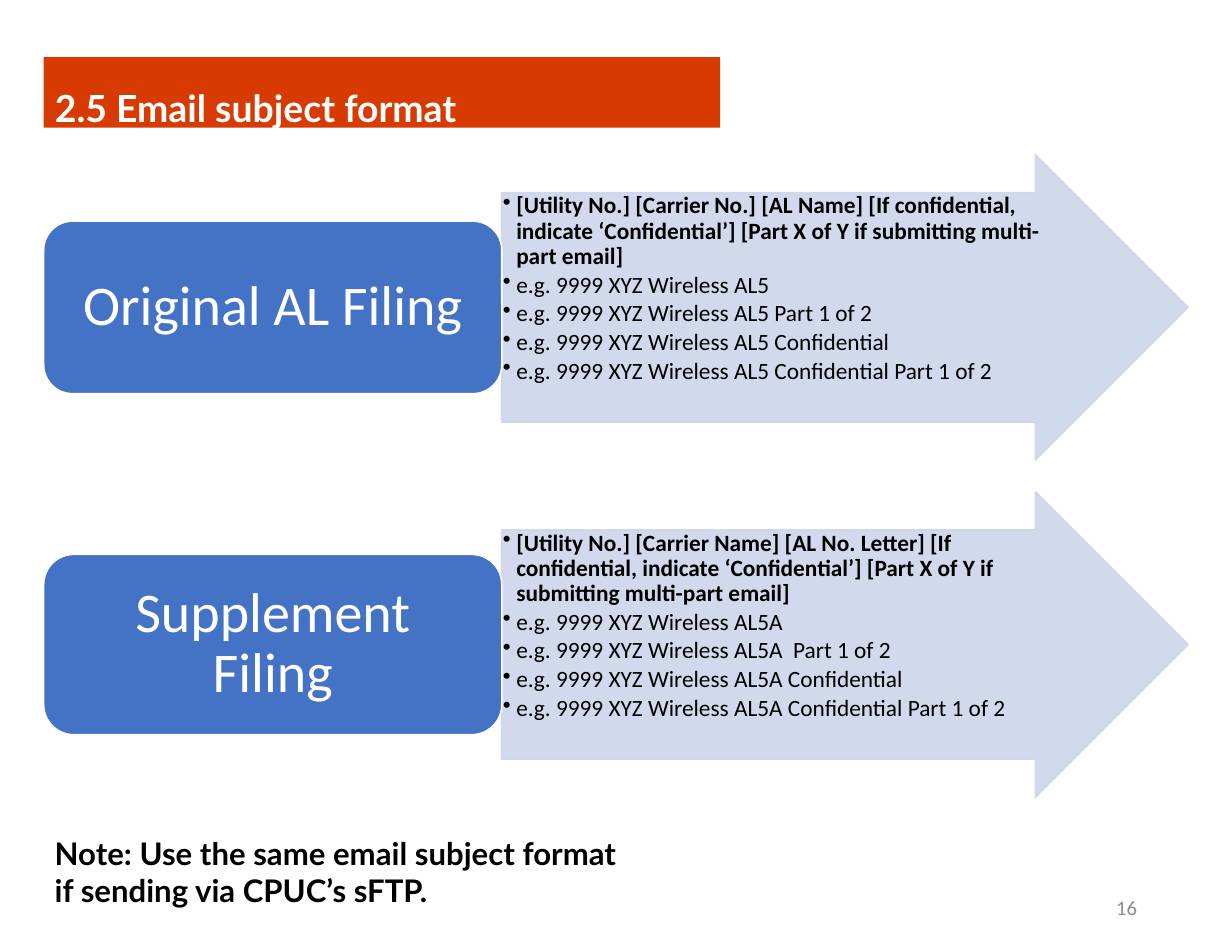
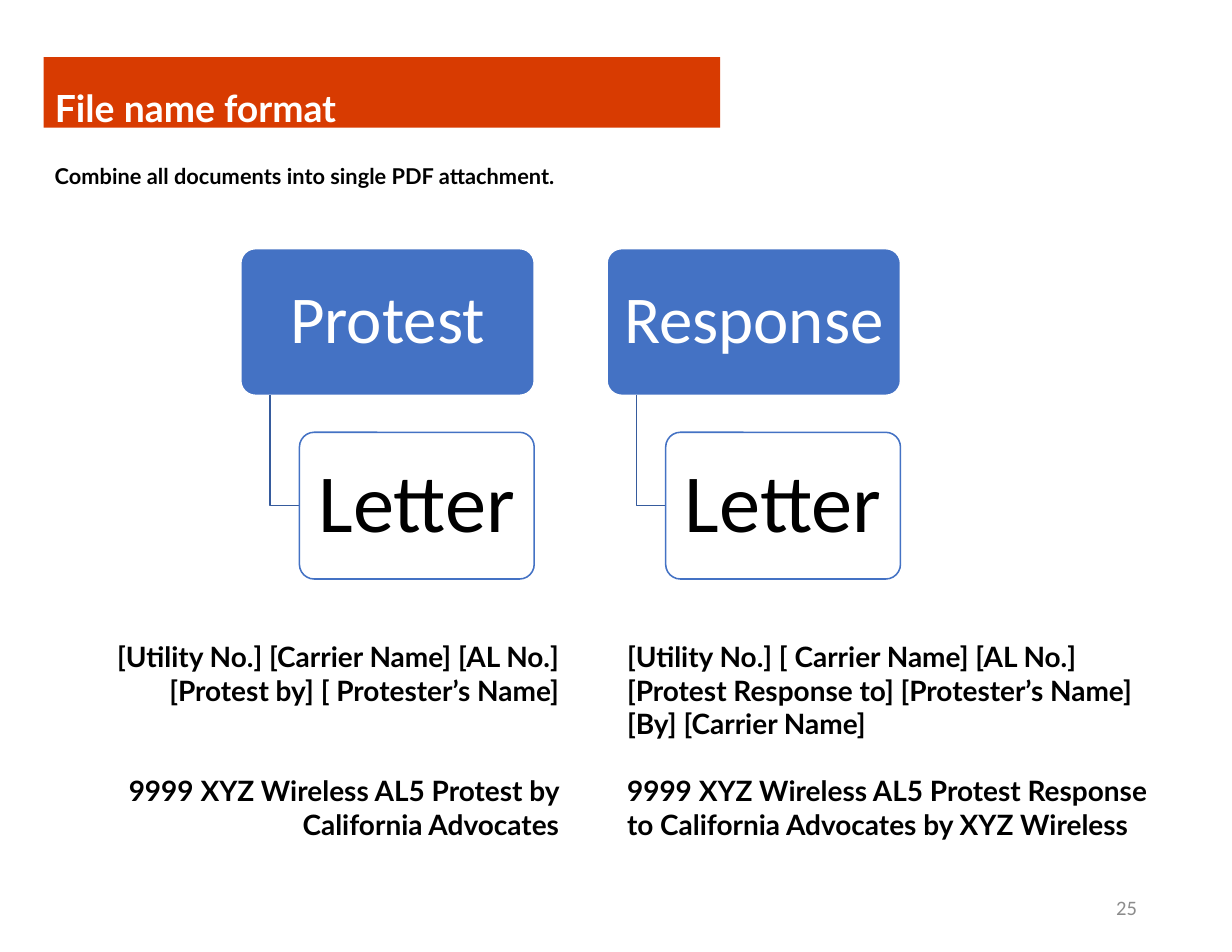
"""Builds two slides on the email subject and file name formats of filings."""

from dataclasses import dataclass
from typing import NamedTuple

import lxml.etree
import pptx
import pptx.dml.color
import pptx.enum.shapes
import pptx.enum.text
import pptx.oxml.ns
import pptx.util

SHAPE = pptx.enum.shapes.MSO_SHAPE
ALIGN = pptx.enum.text.PP_ALIGN
ANCHOR = pptx.enum.text.MSO_ANCHOR
SLIDE_WIDTH = pptx.util.Inches(11)
SLIDE_HEIGHT = pptx.util.Inches(8.5)
COLUMN = SLIDE_WIDTH / 110
ROW = SLIDE_HEIGHT / 85


@dataclass(frozen=True)
class Theme:
    band: str = "D83B01"
    block: str = "4472C4"
    arrow: str = "CFD5EA"
    elbow: str = "365B9D"
    white: str = "FFFFFF"
    black: str = "000000"
    muted: str = "8C8C8C"
    heading_font: str = "Lato"
    body_font: str = "Calibri"
    title_size: float = 24
    note_size: float = 20
    pattern_size: float = 18
    lead_size: float = 14
    label_size: float = 36
    bullet_size: float = 15
    parent_size: float = 43
    child_size: float = 53
    number_size: float = 13.2


THEME = Theme()


class Box(NamedTuple):
    left: float
    top: float
    width: float
    height: float

    def lengths(self) -> tuple[int, int, int, int]:
        return (round(self.left * COLUMN), round(self.top * ROW),
                round(self.width * COLUMN), round(self.height * ROW))


class Filing(NamedTuple):
    label: str
    label_rows: float
    subject: str
    letter: str


class FileName(NamedTuple):
    parent: str
    pattern: str
    example: str
    pattern_left: float
    align: ALIGN
    blank_lines: int


TITLE_BOX = Box(3.9, 5.1, 60.4, 6.3)
NUMBER_BOX = Box(77.7, 78.8, 24.8, 4.5)
NOTE_BOX = Box(3.9, 74, 52.5, 7.7)
LEAD_BOX = Box(3.9, 14, 63, 3.4)
FIRST_ARROW = Box(44.8, 13.8, 61.3, 27.3)
ARROW_PITCH = 30.1
LABEL_LEFT = 3.9
FIRST_PARENT = Box(21.5, 22.2, 26.2, 13.1)
PARENT_PITCH = 32.7
CHILD_DROP = 16.4

FILINGS = [
    Filing("Original AL Filing", 15.4,
           "[Utility No.] [Carrier No.] [AL Name] [If confidential, indicate "
           "‘Confidential’] [Part X of Y if submitting multi-part email]",
           "AL5"),
    Filing("Supplement Filing", 16.1,
           "[Utility No.] [Carrier Name] [AL No. Letter] [If confidential, indicate "
           "‘Confidential’] [Part X of Y if submitting multi-part email]",
           "AL5A"),
]
EXAMPLE_ENDINGS = ["", " Part 1 of 2", " Confidential", " Confidential Part 1 of 2"]
FILE_NAMES = [
    FileName("Protest",
             "[Utility No.] [Carrier Name] [AL No.] [Protest by] [ Protester’s Name]",
             "9999 XYZ Wireless AL5 Protest by California Advocates",
             0, ALIGN.RIGHT, 2),
    FileName("Response",
             "[Utility No.] [ Carrier Name] [AL No.] [Protest Response to] "
             "[Protester’s Name] [By] [Carrier Name]",
             "9999 XYZ Wireless AL5 Protest Response to California Advocates "
             "by XYZ Wireless",
             55, ALIGN.LEFT, 1),
]


def rgb(color: str) -> pptx.dml.color.RGBColor:
    """Turn a hex string into a colour."""
    return pptx.dml.color.RGBColor.from_string(color)


def write(shape, texts: list[str], *, size: float, color: str = THEME.black,
          font: str = THEME.body_font, bold_count: int = 0,
          align: ALIGN = ALIGN.LEFT, anchor: ANCHOR = ANCHOR.TOP,
          spacing: float = 1, gap: float = 0, bullets: bool = False,
          insets: tuple[float, float] = (0.1, 0.05)) -> None:
    """Write one paragraph per text into a shape."""
    frame = shape.text_frame
    frame.word_wrap = True
    frame.auto_size = pptx.enum.text.MSO_AUTO_SIZE.NONE
    frame.vertical_anchor = anchor
    frame.margin_left = frame.margin_right = pptx.util.Inches(insets[0])
    frame.margin_top = frame.margin_bottom = pptx.util.Inches(insets[1])
    for index, text in enumerate(texts):
        paragraph = frame.add_paragraph() if index else frame.paragraphs[0]
        paragraph.alignment = align
        paragraph.line_spacing = spacing
        paragraph.space_before = pptx.util.Pt(gap if index else 0)
        run = paragraph.add_run()
        run.text = text
        run.font.name = font
        run.font.size = pptx.util.Pt(size)
        run.font.bold = index < bold_count
        run.font.color.rgb = rgb(color)
        if bullets:
            add_bullet(paragraph)


def add_bullet(paragraph) -> None:
    """Give a paragraph a hanging round bullet."""
    properties = paragraph._p.get_or_add_pPr()
    indent = pptx.util.Inches(0.12)
    properties.set("marL", str(indent))
    properties.set("indent", str(-indent))
    bullet = lxml.etree.SubElement(properties, pptx.oxml.ns.qn("a:buChar"))
    bullet.set("char", "•")


def add_text(slide, box: Box, texts: list[str], **text_format) -> None:
    """Add a text box with formatted text."""
    write(slide.shapes.add_textbox(*box.lengths()), texts, **text_format)


def add_block(slide, kind: SHAPE, box: Box, fill: str, line: str,
              adjustments: tuple[float, ...] = ()):
    """Add a filled and outlined preset shape."""
    shape = slide.shapes.add_shape(kind, *box.lengths())
    shape.shadow.inherit = False
    shape.fill.solid()
    shape.fill.fore_color.rgb = rgb(fill)
    shape.line.color.rgb = rgb(line)
    shape.line.width = pptx.util.Pt(1)
    for index, value in enumerate(adjustments):
        shape.adjustments[index] = value
    return shape


def soften(shape, percent: int) -> None:
    """Set the opacity of a shape's fill and line."""
    for color in shape._element.spPr.iter(pptx.oxml.ns.qn("a:srgbClr")):
        alpha = lxml.etree.SubElement(color, pptx.oxml.ns.qn("a:alpha"))
        alpha.set("val", str(percent * 1000))


def add_titled_slide(presentation, title: str, number: int):
    """Add a slide with its title band and page number."""
    slide = presentation.slides.add_slide(presentation.slide_layouts[5])
    band = slide.shapes.title
    band.left, band.top, band.width, band.height = TITLE_BOX.lengths()
    band.fill.solid()
    band.fill.fore_color.rgb = rgb(THEME.band)
    write(band, [title], size=THEME.title_size, color=THEME.white,
          font=THEME.heading_font, bold_count=1, spacing=1.5)
    add_text(slide, NUMBER_BOX, [str(number)], size=THEME.number_size,
             color=THEME.muted, align=ALIGN.RIGHT, anchor=ANCHOR.MIDDLE)
    return slide


def add_filing(slide, filing: Filing, arrow_box: Box) -> None:
    """Add a filing label and the arrow with its subject lines."""
    arrow = add_block(slide, SHAPE.RIGHT_ARROW, arrow_box, THEME.arrow,
                      THEME.arrow, (0.75, 0.5))
    soften(arrow, 90)
    examples = [f"e.g. 9999 XYZ Wireless {filing.letter}{ending}"
                for ending in EXAMPLE_ENDINGS]
    if filing.letter == "AL5A":
        examples[1] = examples[1].replace(" Part", "  Part")
    write(arrow, [filing.subject, *examples], size=THEME.bullet_size,
          bold_count=1, spacing=0.9, gap=2.25, bullets=True, insets=(0.01, 0.01))
    label_top = arrow_box.top + (arrow_box.height - filing.label_rows) / 2
    label_box = Box(LABEL_LEFT, label_top, arrow_box.left - LABEL_LEFT,
                    filing.label_rows)
    label = add_block(slide, SHAPE.ROUNDED_RECTANGLE, label_box, THEME.block,
                      THEME.white)
    write(label, [filing.label], size=THEME.label_size, color=THEME.white,
          align=ALIGN.CENTER, anchor=ANCHOR.MIDDLE, spacing=0.9,
          insets=(0.15, 0.07))


def add_elbow(slide, parent: Box, child: Box) -> None:
    """Draw the bent line from a parent block to its child."""
    left = round((parent.left + parent.width * 0.1) * COLUMN)
    top = round((parent.top + parent.height) * ROW)
    right = round(child.left * COLUMN)
    bottom = round((child.top + child.height / 2) * ROW)
    builder = slide.shapes.build_freeform(left, top)
    builder.add_line_segments([(left, bottom), (right, bottom)], close=False)
    elbow = builder.convert_to_shape()
    elbow.shadow.inherit = False
    elbow.fill.background()
    elbow.line.color.rgb = rgb(THEME.elbow)
    elbow.line.width = pptx.util.Pt(1)


def add_file_name(slide, file_name: FileName, parent: Box) -> None:
    """Add a document tree and its file name pattern."""
    child = Box(parent.left + parent.width * 0.2, parent.top + CHILD_DROP,
                parent.width * 0.8, parent.height)
    centred = dict(align=ALIGN.CENTER, anchor=ANCHOR.MIDDLE, spacing=0.9)
    block = add_block(slide, SHAPE.ROUNDED_RECTANGLE, parent, THEME.block,
                      THEME.white, (0.1,))
    write(block, [file_name.parent], size=THEME.parent_size, color=THEME.white,
          insets=(0.09, 0.06), **centred)
    add_elbow(slide, parent, child)
    block = add_block(slide, SHAPE.ROUNDED_RECTANGLE, child, THEME.white,
                      THEME.block, (0.1,))
    write(block, ["Letter"], size=THEME.child_size, insets=(0.11, 0.07), **centred)
    add_text(slide, Box(file_name.pattern_left, 56.6, 50.9, 19.2),
             [file_name.pattern, file_name.example], size=THEME.pattern_size,
             font=THEME.heading_font, bold_count=2, align=file_name.align,
             gap=file_name.blank_lines * THEME.pattern_size * 1.2)


def build_subject_slide(presentation) -> None:
    """Build the slide on email subjects."""
    slide = add_titled_slide(presentation, "2.5 Email subject format", 16)
    add_text(slide, NOTE_BOX,
             ["Note: Use the same email subject format if sending via CPUC’s sFTP."],
             size=THEME.note_size, font=THEME.heading_font, bold_count=1)
    for index, filing in enumerate(FILINGS):
        top = FIRST_ARROW.top + index * ARROW_PITCH
        add_filing(slide, filing, FIRST_ARROW._replace(top=top))


def build_file_name_slide(presentation) -> None:
    """Build the slide on file names."""
    slide = add_titled_slide(presentation, "File name format", 25)
    add_text(slide, LEAD_BOX, ["Combine all documents into single PDF attachment."],
             size=THEME.lead_size, font=THEME.heading_font, bold_count=1)
    for index, file_name in enumerate(FILE_NAMES):
        left = FIRST_PARENT.left + index * PARENT_PITCH
        add_file_name(slide, file_name, FIRST_PARENT._replace(left=left))


def main() -> None:
    """Build and save the presentation."""
    presentation = pptx.Presentation()
    presentation.slide_width = SLIDE_WIDTH
    presentation.slide_height = SLIDE_HEIGHT
    build_subject_slide(presentation)
    build_file_name_slide(presentation)
    presentation.save("out.pptx")


if __name__ == "__main__":
    main()
